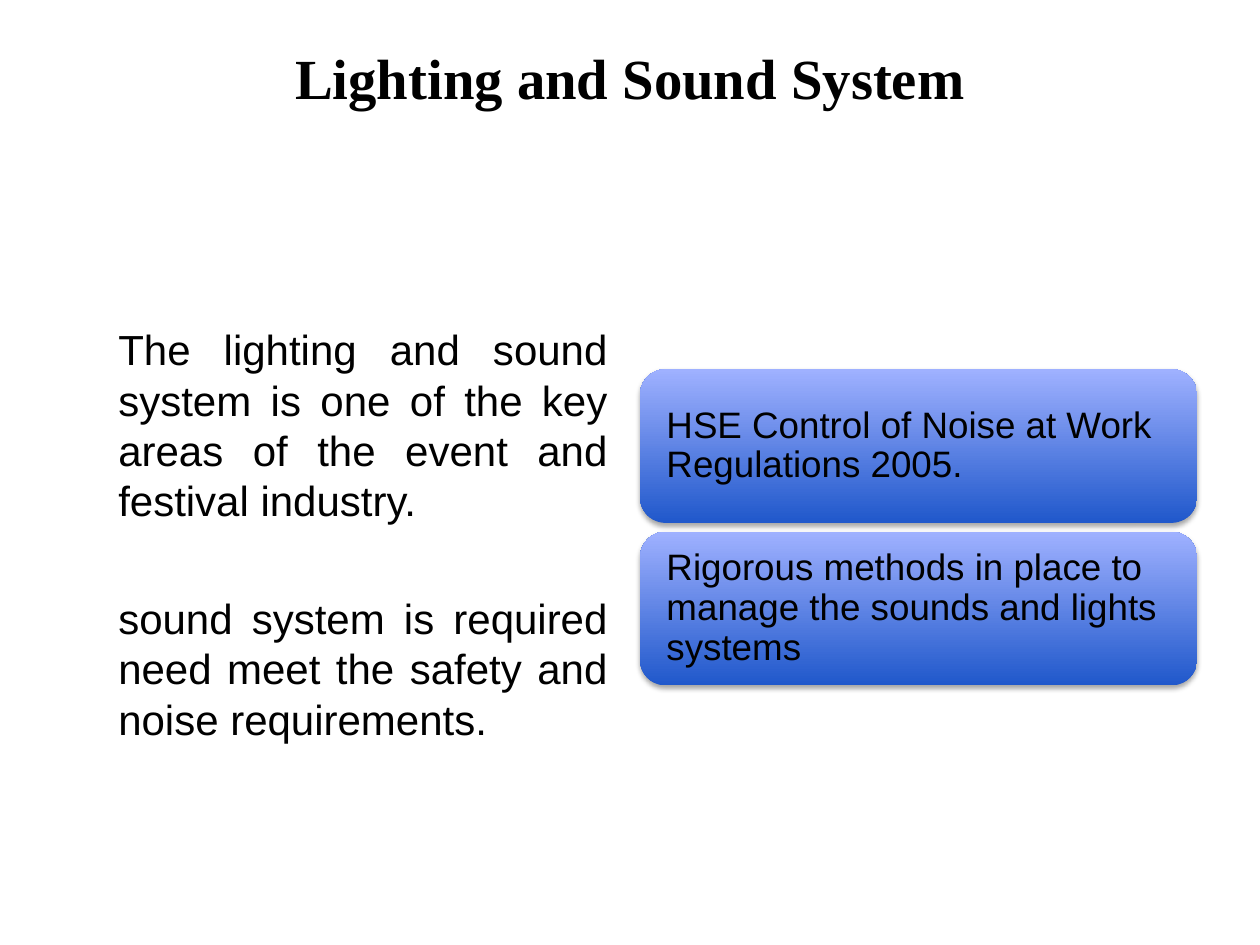
"""Build the Lighting and Sound System slide."""
from lxml import etree
from pptx import Presentation
from pptx.dml.color import RGBColor
from pptx.enum.shapes import MSO_SHAPE
from pptx.enum.text import MSO_ANCHOR, PP_ALIGN
from pptx.oxml.ns import qn
from pptx.util import Inches, Pt

ROUNDED = MSO_SHAPE.ROUNDED_RECTANGLE
TOP, MIDDLE = MSO_ANCHOR.TOP, MSO_ANCHOR.MIDDLE
LEFT, CENTER, JUSTIFY = PP_ALIGN.LEFT, PP_ALIGN.CENTER, PP_ALIGN.JUSTIFY

TITLE = "Lighting and Sound System"
BODY = [
    "The lighting and sound system is one of the key areas of the event and festival industry.",
    "sound system is required need meet the safety and noise requirements.",
]
CARDS = [
    "HSE Control of Noise at Work Regulations 2005.",
    "Rigorous methods in place to manage the sounds and lights systems",
]

THEME = {
    "text": RGBColor.from_string("000000"),
    "gradient": [(0, "2058CB"), (1, "9FB1FF")],
    "shadow": "000000",
    "title": {"name": "Times New Roman", "size": Pt(32.4), "bold": True},
    "body": {"name": "Arial", "size": Pt(24)},
    "card": {"name": "Arial", "size": Pt(21)},
}
TITLE_BOX = (0.5, 0.3, 9, 0.62)
BODY_BOX = (0.84, 2.52, 4.08, 3.8)
CARD_LEFT, CARD_TOP, CARD_WIDTH, CARD_HEIGHT = 5.08, 2.93, 4.42, 1.22
CARD_STEP = 1.29
CARD_INSET = 0.15
BODY_SPACES = [4.8, 38.4]


def apply_values(target, values):
    for name, value in values.items():
        setattr(target, name, value)


def write_text(shape, texts, font, anchor, formats):
    frame = shape.text_frame
    apply_values(frame, {"word_wrap": True, "vertical_anchor": anchor})
    for index, (text, values) in enumerate(zip(texts, formats)):
        paragraph = frame.paragraphs[0] if index == 0 else frame.add_paragraph()
        apply_values(paragraph, values)
        run = paragraph.add_run()
        run.text = text
        apply_values(run.font, font)
        run.font.color.rgb = THEME["text"]


def add_text(slide, box, *content):
    write_text(slide.shapes.add_textbox(*map(Inches, box)), *content)


def add_shadow(shape):
    shape.shadow.inherit = False
    effects = shape._element.spPr.find(qn("a:effectLst"))
    shadow = etree.SubElement(
        effects, qn("a:outerShdw"), blurRad=str(Pt(3.1)), dist=str(Pt(1.8)),
        dir="5400000", rotWithShape="0")
    color = etree.SubElement(shadow, qn("a:srgbClr"), val=THEME["shadow"])
    etree.SubElement(color, qn("a:alpha"), val="35000")


def add_card(slide, index, text):
    box = (CARD_LEFT, CARD_TOP + index * CARD_STEP, CARD_WIDTH, CARD_HEIGHT)
    shape = slide.shapes.add_shape(ROUNDED, *map(Inches, box))
    shape.fill.gradient()
    shape.fill.gradient_angle = 90
    for stop, (position, color) in zip(shape.fill.gradient_stops, THEME["gradient"]):
        stop.position = position
        stop.color.rgb = RGBColor.from_string(color)
    shape.line.fill.background()
    add_shadow(shape)
    sides = ("left", "top", "right", "bottom")
    apply_values(shape.text_frame, {f"margin_{side}": Inches(CARD_INSET) for side in sides})
    values = {"alignment": LEFT, "line_spacing": 0.9, "space_after": Pt(7.35)}
    write_text(shape, [text], THEME["card"], MIDDLE, [values])


def main():
    presentation = Presentation()
    apply_values(presentation, {"slide_width": Inches(10), "slide_height": Inches(7.5)})
    slide = presentation.slides.add_slide(presentation.slide_layouts[6])
    body_formats = [{"alignment": JUSTIFY, "space_before": Pt(space)} for space in BODY_SPACES]
    add_text(slide, BODY_BOX, BODY, THEME["body"], TOP, body_formats)
    for index, text in enumerate(CARDS):
        add_card(slide, index, text)
    add_text(slide, TITLE_BOX, [TITLE], THEME["title"], MIDDLE, [{"alignment": CENTER}])
    presentation.save("out.pptx")


if __name__ == "__main__":
    main()
